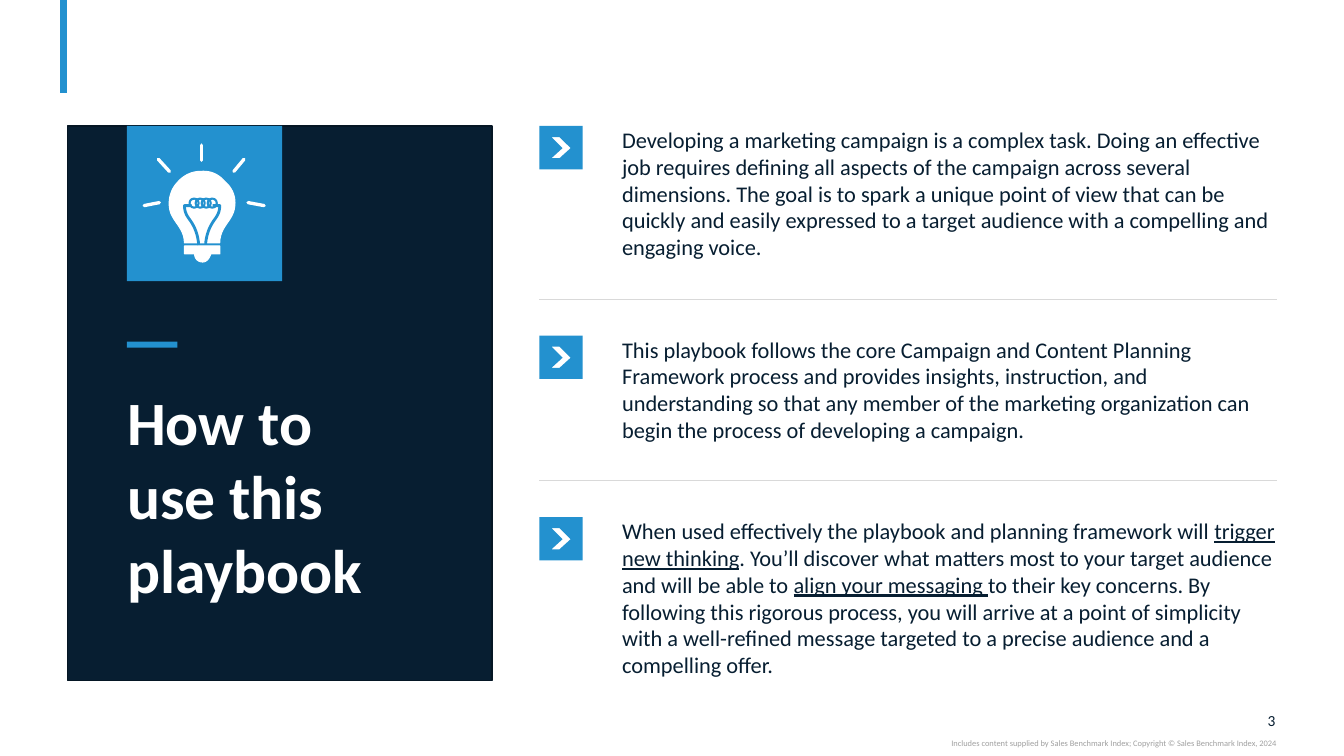
from lxml import etree
from pptx import Presentation
from pptx.dml.color import RGBColor
from pptx.enum.shapes import MSO_CONNECTOR, MSO_SHAPE
from pptx.enum.text import MSO_ANCHOR, MSO_AUTO_SIZE, PP_ALIGN
from pptx.oxml.ns import qn
from pptx.util import Inches, Pt

STRAIGHT = MSO_CONNECTOR.STRAIGHT
RECTANGLE, OVAL = MSO_SHAPE.RECTANGLE, MSO_SHAPE.OVAL
TOP, MIDDLE = MSO_ANCHOR.TOP, MSO_ANCHOR.MIDDLE
LEFT, RIGHT = PP_ALIGN.LEFT, PP_ALIGN.RIGHT
NO_AUTOFIT = MSO_AUTO_SIZE.NONE
TITLE_ONLY = 5

COLORS = {"navy": "071E31", "edge": "051624", "blue": "2391CF",
          "white": "FFFFFF", "rule": "D9D9D9", "gray": "A0A0A0"}
FORMATS = {
    "title": {"size": Pt(44), "bold": True, "color": "white"},
    "body": {"size": Pt(16), "color": "navy"},
    "number": {"size": Pt(11), "color": "navy"},
    "copyright": {"size": Pt(6), "color": "gray"},
}

# Each step: top of the row, text height, then (text, underlined) runs
STEPS = [
    (1.25, 1.35, [("Developing a marketing campaign is a complex task. Doing an effective job "
                   "requires defining all aspects of the campaign across several dimensions. "
                   "The goal is to spark a unique point of view that can be quickly and easily "
                   "expressed to a target audience with a compelling and engaging voice.", False)]),
    (3.33, 1.08, [("This playbook follows the core Campaign and Content Planning Framework process "
                   "and provides insights, instruction, and understanding so that any member of "
                   "the marketing organization can begin the process of developing a campaign.",
                   False)]),
    (5.13, 1.62, [("When used effectively the playbook and planning framework will ", False),
                  ("trigger new thinking", True),
                  (". You’ll discover what matters most to your target audience and will be "
                   "able to ", False),
                  ("align your messaging ", True),
                  ("to their key concerns. By following this rigorous process, you will arrive "
                   "at a point of simplicity with a well-refined message targeted to a precise "
                   "audience and a compelling offer.", False)]),
]

# Light bulb outlines in inches from the badge corner; six numbers make a curve
RAYS = [(1.16, 0.33, 1.06, 0.45), (0.31, 0.33, 0.42, 0.45), (0.17, 0.79, 0.32, 0.76),
        (1.36, 0.79, 1.2, 0.76), (0.74, 0.19, 0.74, 0.34)]
GLASS = [(0.92, 1.16), (0.57, 1.16), (0.57, 1, 0.43, 0.94, 0.42, 0.8),
         (0.41, 0.7, 0.45, 0.61, 0.5, 0.56), (0.55, 0.5, 0.63, 0.45, 0.73, 0.45),
         (0.84, 0.44, 0.92, 0.49, 0.97, 0.55), (1.03, 0.6, 1.08, 0.68, 1.07, 0.79),
         (1.06, 0.94, 0.92, 0.99, 0.92, 1.16)]
SOCKET = [(0.57, 1.19), (0.92, 1.19), (0.92, 1.27), (0.83, 1.27),
          (0.82, 1.31, 0.79, 1.35, 0.75, 1.35), (0.7, 1.35, 0.67, 1.31, 0.67, 1.27),
          (0.57, 1.27)]
FILAMENT = [(0.64, 0.79), (0.57, 0.79), (0.57, 0.86, 0.6, 0.9, 0.63, 0.94),
            (0.7, 1.04, 0.71, 1.15, 0.71, 1.18)]
BULB_WIDTH = 1.49

# Arrow tile: a square with a chevron cut out
TILE = [(0, 0), (0.43, 0), (0.43, 0.43), (0, 0.43)]
CHEVRON = [(0.12, 0.11), (0.2, 0.11), (0.31, 0.22), (0.2, 0.32), (0.12, 0.32), (0.23, 0.22)]


def rgb(name):
    return RGBColor.from_string(COLORS[name])


def paint(shape, fill=None, line=None, width=0.75):
    shape.shadow.inherit = False
    if fill:
        shape.fill.solid()
        shape.fill.fore_color.rgb = rgb(fill)
    else:
        shape.fill.background()
    if line:
        shape.line.color.rgb = rgb(line)
        shape.line.width = Pt(width)
    else:
        shape.line.fill.background()


def add_preset(slide, kind, box, **style):
    shape = slide.shapes.add_shape(kind, *map(Inches, box))
    paint(shape, **style)


def add_line(slide, ends, color, width, cap="flat"):
    connector = slide.shapes.add_connector(STRAIGHT, *map(Inches, ends))
    connector.line.color.rgb = rgb(color)
    connector.line.width = Pt(width)
    properties = connector._element.spPr
    properties.find(qn("a:ln")).set("cap", cap)
    etree.SubElement(properties, qn("a:effectLst"))


def trace(outline, steps=12):
    """Turn corners and cubic curves into a list of points."""
    points = [outline[0]]
    for segment in outline[1:]:
        if len(segment) == 2:
            points.append(segment)
            continue
        controls = [points[-1], segment[:2], segment[2:4], segment[4:]]
        for step in range(1, steps + 1):
            t = step / steps
            weights = [(1 - t) ** 3, 3 * t * (1 - t) ** 2, 3 * t * t * (1 - t), t ** 3]
            points.append(tuple(sum(weight * point[axis] for weight, point in
                                    zip(weights, controls)) for axis in (0, 1)))
    return points


def add_outline(slide, left, top, contours, closed=True, **style):
    placed = [[(Inches(left + x), Inches(top + y)) for x, y in points] for points in contours]
    builder = slide.shapes.build_freeform(*placed[0][0])
    for index, points in enumerate(placed):
        if index:
            builder.move_to(*points[0])
        builder.add_line_segments(points[1:], close=closed)
    paint(builder.convert_to_shape(), **style)


def write_text(shape, runs, style, align=LEFT, anchor=TOP):
    frame = shape.text_frame
    frame_format = {"word_wrap": True, "auto_size": NO_AUTOFIT, "vertical_anchor": anchor,
                    "margin_left": 0, "margin_top": 0, "margin_right": 0, "margin_bottom": 0}
    for name, value in frame_format.items():
        setattr(frame, name, value)
    paragraph = frame.paragraphs[0]
    paragraph.alignment = align
    paragraph.line_spacing = 1.0
    for text, underlined in runs:
        for line_index, line in enumerate(text.split("\n")):
            if line_index:
                paragraph.add_line_break()
            run = paragraph.add_run()
            run.text = line
            run.font.name = "Calibri"
            run.font.underline = underlined
            for name, value in FORMATS[style].items():
                if name == "color":
                    run.font.color.rgb = rgb(value)
                else:
                    setattr(run.font, name, value)


def add_text(slide, box, runs, style, **layout):
    write_text(slide.shapes.add_textbox(*map(Inches, box)), runs, style, **layout)


def draw_frame(slide, right):
    """Top accent, page number and copyright line."""
    add_line(slide, (0.63, 0, 0.63, 0.92), "blue", 5)
    add_text(slide, (right - 0.35, 7.05, 0.33, 0.19), [("3", False)], "number",
             align=RIGHT, anchor=MIDDLE)
    add_text(slide, (right - 5.17, 7.32, 5.16, 0.1),
             [("Includes content supplied by Sales Benchmark Index; "
               "Copyright © Sales Benchmark Index, 2024", False)], "copyright", align=RIGHT)


def draw_badge(slide, left, top, side):
    """Blue square with a shining light bulb."""
    add_preset(slide, RECTANGLE, (left, top, side, side), fill="blue")
    for x1, y1, x2, y2 in RAYS:
        add_line(slide, (left + x1, top + y1, left + x2, top + y2), "white", 2.37, "rnd")
    for outline in (GLASS, SOCKET):
        add_outline(slide, left, top, [trace(outline)], fill="white", line="white")
    for coil in range(4):
        add_preset(slide, OVAL, (left + 0.62 + 0.06 * coil, top + 0.72, 0.09, 0.09),
                   line="blue", width=1.5)
    strand = trace(FILAMENT)
    for points in (strand, [(BULB_WIDTH - x, y) for x, y in strand]):
        add_outline(slide, left, top, [points], closed=False, line="blue", width=2)


def draw_title_panel(slide, left, top, width, height):
    add_preset(slide, RECTANGLE, (left, top, width, height), fill="navy", line="edge", width=1)
    inner = left + 0.59
    draw_badge(slide, inner, top, 1.54)
    add_preset(slide, RECTANGLE, (inner, top + 2.14, 0.5, 0.06), fill="blue")
    title = slide.shapes.title
    box = {"left": inner, "top": top + 2.56, "width": 3.03, "height": 2.22}
    for name, value in box.items():
        setattr(title, name, Inches(value))
    # Bring the title in front of the panel
    slide.shapes._spTree.append(title._element)
    write_text(title, [("How to\nuse this playbook", False)], "title")


def draw_steps(slide, left, right):
    """Arrow tile and text for each step, with rules between them."""
    text_left = left + 0.82
    for index, (top, height, runs) in enumerate(STEPS):
        if index:
            add_line(slide, (left, top - 0.36, right, top - 0.36), "rule", 0.5)
        add_outline(slide, left, top, [TILE, CHEVRON], fill="blue")
        add_text(slide, (text_left, top, right - text_left, height), runs, "body")


def main():
    presentation = Presentation()
    presentation.slide_width = Inches(13.33)
    presentation.slide_height = Inches(7.5)
    slide = presentation.slides.add_slide(presentation.slide_layouts[TITLE_ONLY])
    draw_frame(slide, right=12.67)
    draw_title_panel(slide, 0.67, 1.25, 4.21, 5.5)
    draw_steps(slide, left=5.35, right=12.67)
    presentation.save("out.pptx")


if __name__ == "__main__":
    main()
